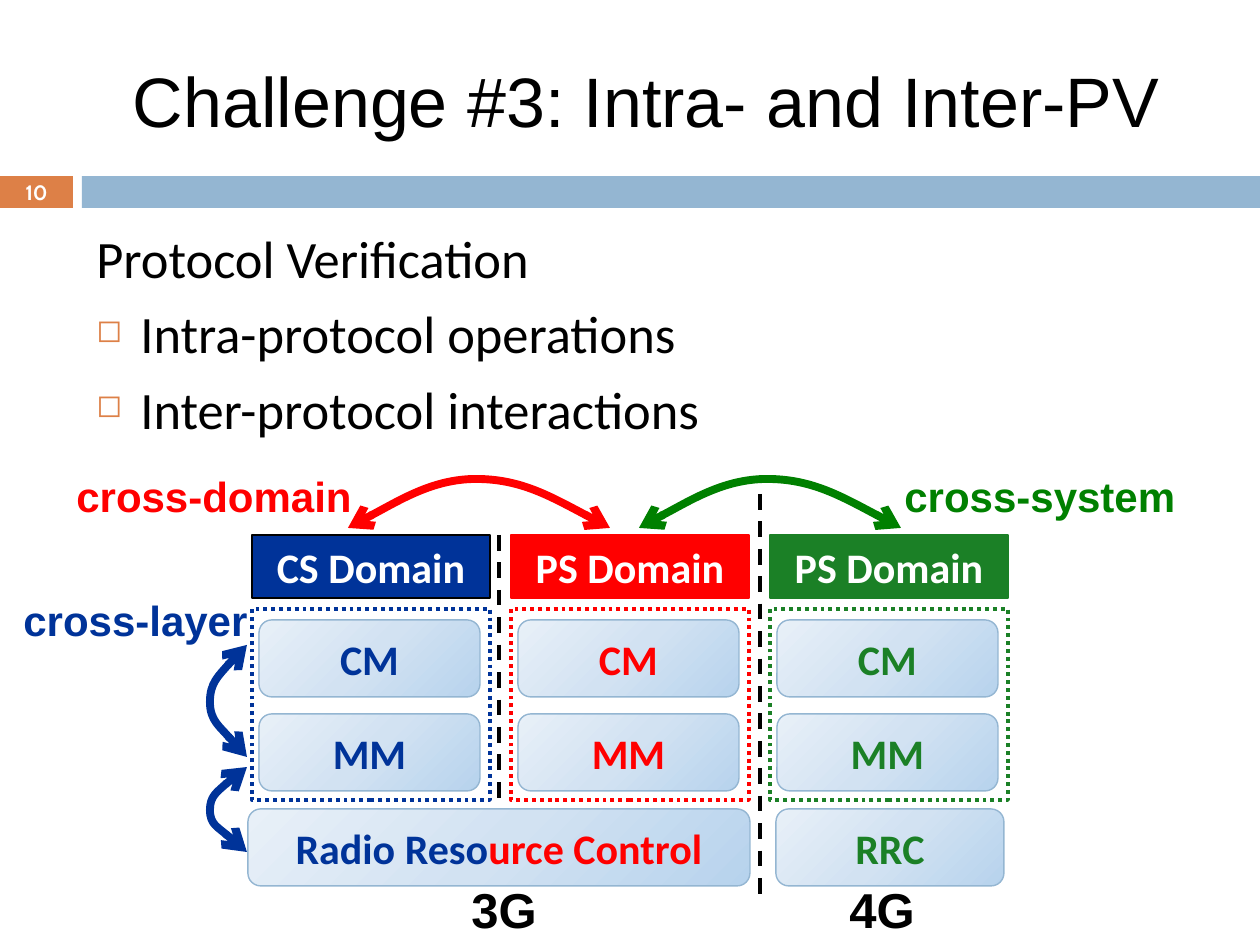
from dataclasses import dataclass

from lxml import etree
from pptx import Presentation
from pptx.dml.color import RGBColor
from pptx.enum.dml import MSO_LINE
from pptx.enum.shapes import MSO_CONNECTOR, MSO_SHAPE
from pptx.enum.text import MSO_ANCHOR, MSO_AUTO_SIZE, PP_ALIGN
from pptx.oxml.ns import qn
from pptx.util import Emu, Pt

RECT = MSO_SHAPE.RECTANGLE
ROUNDED = MSO_SHAPE.ROUNDED_RECTANGLE
STRAIGHT = MSO_CONNECTOR.STRAIGHT
DASH = MSO_LINE.DASH
DOTS = MSO_LINE.ROUND_DOT
TOP = MSO_ANCHOR.TOP
MIDDLE = MSO_ANCHOR.MIDDLE
LEFT = PP_ALIGN.LEFT
CENTER = PP_ALIGN.CENTER
GROW = MSO_AUTO_SIZE.SHAPE_TO_FIT_TEXT

SCALE = 914400 / 126
BEND = [(0, 0), (0.17, 0.5), (0.34, 1), (0.51, 1), (0.68, 1), (1, 0), (1, 0)]


@dataclass(frozen=True)
class Theme:
    black: str = "000000"
    white: str = "FFFFFF"
    orange: str = "DD8047"
    band: str = "94B6D2"
    blue: str = "003399"
    red: str = "FF0000"
    green: str = "1B8026"
    bright_green: str = "008000"
    layer_stops: tuple = ((0, "B7D3ED"), (50, "D2E2F2"), (100, "E8F0F8"))
    heading: str = "Arial"
    body: str = "Calibri"
    number: str = "Cabin"
    title_size: float = 40
    body_size: float = 30
    system_size: float = 28
    label_size: float = 24
    number_size: float = 11.9


T = Theme()


def px(n):
    return Emu(round(n * SCALE))


def rgb(color):
    return RGBColor.from_string(color)


def add_text(p, text, color=T.black, size=T.label_size, font=T.body, bold=True, align=CENTER):
    p.alignment = align
    r = p.add_run()
    r.text = text
    r.font.name = font
    r.font.size = Pt(size)
    r.font.bold = bold
    r.font.color.rgb = rgb(color)


def add_textbox(s, x, y, w, h, anchor=TOP, wrap=True):
    tf = s.shapes.add_textbox(px(x), px(y), px(w), px(h)).text_frame
    tf.word_wrap = wrap
    tf.vertical_anchor = anchor
    if not wrap:
        tf.auto_size = GROW
    return tf


def add_label(s, text, x, y, w, h, **fmt):
    tf = add_textbox(s, x, y, w, h, wrap=False)
    add_text(tf.paragraphs[0], text, font=T.heading, align=LEFT, **fmt)


def add_box(s, x, y, w, h, kind=RECT, fill=None, line=None, width=0.75, dash=None, anchor=TOP):
    sp = s.shapes.add_shape(kind, px(x), px(y), px(w), px(h))
    sp.shadow.inherit = False
    if fill:
        sp.fill.solid()
        sp.fill.fore_color.rgb = rgb(fill)
    else:
        sp.fill.background()
    if line:
        sp.line.color.rgb = rgb(line)
        sp.line.width = Pt(width)
        if dash:
            sp.line.dash_style = dash
    else:
        sp.line.fill.background()
    sp.text_frame.vertical_anchor = anchor
    return sp


def add_layer(s, x, y, w, *runs):
    sp = add_box(s, x, y, w, 77, kind=ROUNDED, line=T.band, width=0.8, anchor=MIDDLE)
    sp.fill.gradient()
    sp.fill.gradient_angle = 135
    stops = next(sp._element.iter(qn("a:gsLst")))
    for gs in list(stops):
        stops.remove(gs)
    for pos, color in T.layer_stops:
        gs = etree.SubElement(stops, qn("a:gs"), pos=str(pos * 1000))
        etree.SubElement(gs, qn("a:srgbClr"), val=color)
    for text, color in runs:
        add_text(sp.text_frame.paragraphs[0], text, color=color)
    return sp


def add_divider(s, x, top, bottom, target=None):
    c = s.shapes.add_connector(STRAIGHT, px(x), px(top), px(x), px(bottom))
    c.line.color.rgb = rgb(T.black)
    c.line.width = Pt(2.25)
    c.line.dash_style = DASH
    etree.SubElement(c._element.spPr, qn("a:effectLst"))
    if target is not None:
        c.end_connect(target, 0)


def add_arc(s, start, along, bulge, color):
    points = [tuple(round(o + a * t + b * u) for o, a, b in zip(start, along, bulge))
              for t, u in BEND]
    fb = s.shapes.build_freeform(*points[0], scale=SCALE)
    fb.add_line_segments(points[1:], close=False)
    sp = fb.convert_to_shape()
    segments = list(sp._element.iter(qn("a:lnTo")))
    outline = segments[0].getparent()
    for i in range(0, len(segments), 3):
        curve = etree.SubElement(outline, qn("a:cubicBezTo"))
        for segment in segments[i:i + 3]:
            curve.append(segment[0])
            outline.remove(segment)
    sp.shadow.inherit = False
    sp.fill.background()
    sp.line.color.rgb = rgb(color)
    sp.line.width = Pt(4.5)
    for end in ("a:headEnd", "a:tailEnd"):
        etree.SubElement(sp.line._get_or_add_ln(), qn(end), type="arrow")


def add_body(s, lines):
    tf = add_textbox(s, 84, 220, 1124, 620)
    for i, (text, bulleted) in enumerate(lines):
        p = tf.add_paragraph() if i else tf.paragraphs[0]
        p.space_before = Pt(7)
        add_text(p, text, size=T.body_size, bold=False, align=LEFT)
        pPr = p._p.get_or_add_pPr()
        pPr.set("marL", str(px(44)))
        pPr.set("indent", str(px(-44)))
        if bulleted:
            color = etree.SubElement(pPr, qn("a:buClr"))
            etree.SubElement(color, qn("a:srgbClr"), val=T.orange)
            etree.SubElement(pPr, qn("a:buSzPct"), val="60000")
            etree.SubElement(pPr, qn("a:buChar"), char="◻")


def add_frame(s):
    add_box(s, 0, 176, 73, 32, fill=T.orange)
    add_box(s, 82, 176, 1178, 32, fill=T.band)
    title = add_textbox(s, 84, 32, 1124, 136, anchor=MIDDLE)
    add_text(title.paragraphs[0], "Challenge #3: Intra- and Inter-PV",
             size=T.title_size, font=T.heading, bold=False)
    number = add_textbox(s, 0, 175, 73, 34, anchor=MIDDLE)
    add_text(number.paragraphs[0], "10", color=T.white, size=T.number_size, font=T.number)


def add_column(s, x, name, color, border):
    add_box(s, x, 609, 238, 191, line=color, width=2.25, dash=DOTS)
    header = add_box(s, x, 535, 238, 63, fill=color, line=border)
    add_text(header.text_frame.paragraphs[0], name, color=T.white)
    for y, layer in ((620, "CM"), (714, "MM")):
        add_layer(s, x + 7, y, 221, (layer, color))


def main():
    prs = Presentation()
    prs.slide_width, prs.slide_height = px(1260), px(945)
    s = prs.slides.add_slide(prs.slide_layouts[6])
    add_frame(s)
    add_body(s, [("Protocol Verification", False),
                 ("Intra-protocol operations", True),
                 ("Inter-protocol interactions", True)])

    shared = add_layer(s, 248, 809, 502, ("Radio Reso", T.blue), ("urce Control", T.red))
    add_layer(s, 776, 809, 228, ("RRC", T.green))
    columns = [("CS Domain", T.blue, T.black),
               ("PS Domain", T.red, T.red),
               ("PS Domain", T.green, T.green)]
    for i, column in enumerate(columns):
        add_column(s, 252 + 259 * i, *column)
    add_divider(s, 499, 535, 809, target=shared)
    add_divider(s, 760, 494, 903)

    for y, height in ((645, 112), (767, 85)):
        add_arc(s, (247, y), (0, height), (-37, 0), T.blue)
    for x, color in ((610, T.red), (901, T.bright_green)):
        add_arc(s, (x, 528), (-262, 0), (0, -49), color)

    for text, x in (("3G", 459), ("4G", 837)):
        add_label(s, text, x, 873, 92, 72, size=T.system_size)
    for text, x, y, w, color in (("cross-layer", 11, 588, 252, T.blue),
                                 ("cross-domain", 64, 464, 304, T.red),
                                 ("cross-system", 892, 464, 299, T.bright_green)):
        add_label(s, text, x, y, w, 63, color=color)
    prs.save("out.pptx")


if __name__ == "__main__":
    main()
